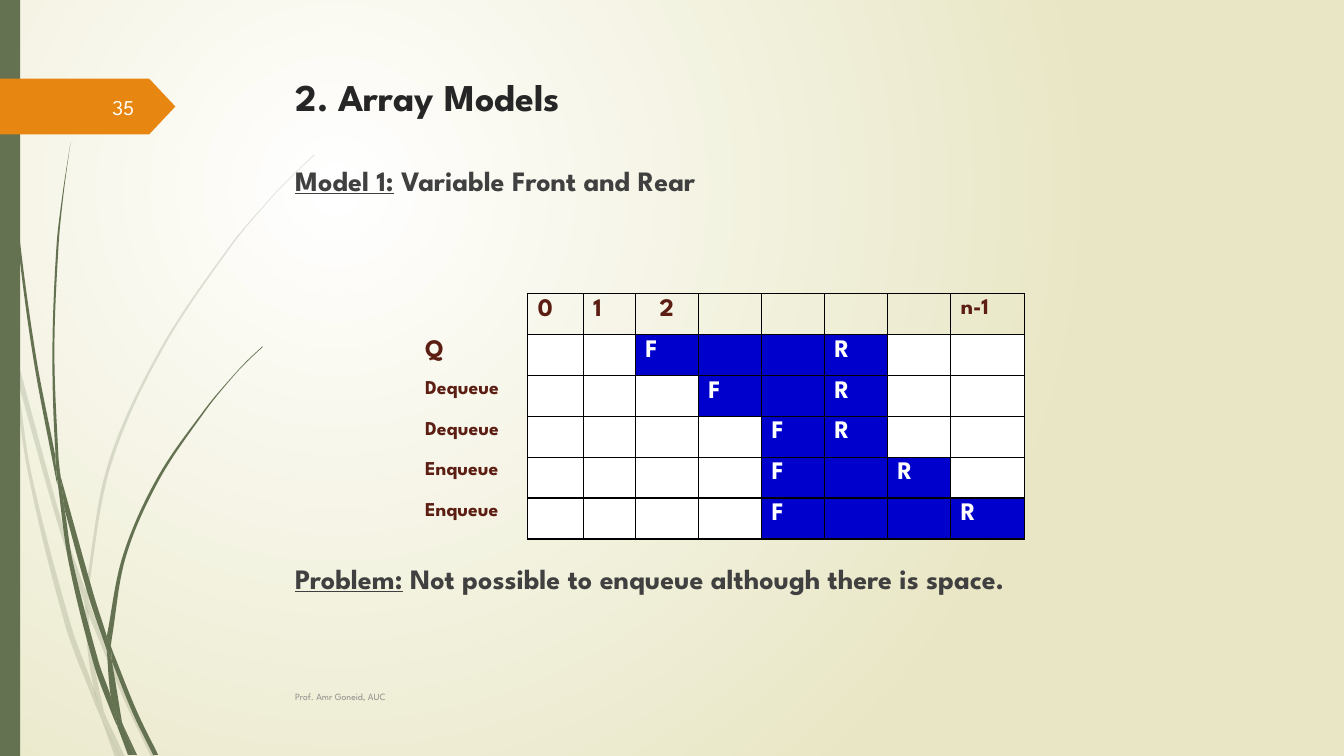
from math import dist

from lxml.etree import SubElement
from pptx import Presentation
from pptx.dml.color import RGBColor
from pptx.enum.shapes import MSO_SHAPE
from pptx.enum.text import MSO_ANCHOR, PP_ALIGN
from pptx.oxml.ns import qn
from pptx.util import Cm, Pt

RECTANGLE, PENTAGON = MSO_SHAPE.RECTANGLE, MSO_SHAPE.PENTAGON
TOP, MIDDLE = MSO_ANCHOR.TOP, MSO_ANCHOR.MIDDLE
LEFT, CENTER, RIGHT = PP_ALIGN.LEFT, PP_ALIGN.CENTER, PP_ALIGN.RIGHT

FONT = "League Spartan"
GREEN, ORANGE, BROWN, BLUE = "647252", "E78712", "5C1E13", "0000CC"
WHITE, BLACK, BODY = "FFFFFF", "000000", "404040"

BLADE_UNIT = Cm(0.0254)
PALE_BLADES = [
    ([(11, 350), (9, 322), (0, 282)], [(0, 299), (10, 344), (11, 350)]),
    ([(85, 586), (62, 520), (14, 345)], [(17, 376), (58, 522), (84, 599)]),
    ([(155, 751), (127, 692), (92, 607), (88, 596)], [(88, 610), (123, 694), (150, 751)]),
    ([(124, 751), (105, 711)], [(105, 711), (119, 751)]),
    ([(101, 714), (99, 707), (93, 683), (70, 619), (31, 469), (17, 376), (11, 350)],
     [(11, 350), (28, 470), (65, 621), (92, 693), (101, 714)]),
    ([(84, 599), (87, 646), (93, 683), (96, 692), (105, 711)],
     [(103, 706), (91, 646), (88, 610), (88, 608), (84, 599)]),
    ([(88, 596), (88, 584), (110, 462), (160, 349), (229, 245), (268, 198), (290, 175),
      (312, 154)],
     [(312, 153), (289, 175), (268, 197), (228, 244), (158, 348), (107, 461), (85, 584),
      (85, 586)]),
    ([(101, 714), (114, 751)], [(119, 751), (101, 714)]),
    ([(88, 610), (88, 596)], [(85, 586), (84, 599)]),
    ([(93, 683), (99, 707), (101, 714), (119, 751)], [(105, 711), (96, 692), (93, 683)]),
]
DARK_BLADES = [
    ([(3, 0), (4, 48), (7, 110), (17, 233), (33, 355), (56, 477), (57, 481)],
     [(55, 457), (55, 453), (36, 355), (19, 232), (8, 109), (5, 48), (4, 0)]),
    ([(106, 633), (106, 631), (93, 590), (60, 472)], [(64, 505), (88, 592), (106, 645)]),
    ([(157, 749), (136, 706), (113, 649), (110, 641)], [(111, 656), (132, 708), (152, 749)]),
    ([(117, 722), (116, 717), (110, 691), (98, 657), (72, 556), (64, 505), (57, 477)],
     [(57, 477), (68, 557), (93, 659), (111, 708), (117, 722)]),
    ([(60, 472), (58, 453), (54, 349), (58, 245), (63, 193), (70, 141)],
     [(70, 141), (62, 193), (56, 245), (52, 349), (55, 449), (60, 472)]),
    ([(136, 749), (122, 719)], [(122, 719), (133, 749)]),
    ([(55, 449), (55, 453), (57, 477), (64, 505)], [(60, 472), (55, 449)]),
    ([(110, 641), (111, 633), (125, 552), (158, 476), (205, 406), (231, 374), (245, 359),
      (261, 344)],
     [(260, 344), (245, 358), (231, 373), (204, 405), (156, 474), (122, 551), (106, 631)]),
    ([(117, 722), (127, 749)], [(131, 749), (117, 722)]),
    ([(106, 645), (110, 691), (116, 706), (122, 719)],
     [(121, 716), (111, 656), (109, 651), (106, 645)]),
    ([(106, 645), (109, 651), (111, 656)], [(110, 641), (106, 631), (106, 633)]),
    ([(133, 749), (122, 719), (116, 706), (110, 691)], [(116, 717), (117, 722), (130, 749)]),
]

INDEX_LABELS = ["0", "1", "2", "", "", "", "", "n-1"]
QUEUE_STATES = [("Q", 2, 5), ("Dequeue", 3, 5), ("Dequeue", 4, 5),
                ("Enqueue", 4, 6), ("Enqueue", 4, 7)]
COLUMN_WIDTHS = [2.84, 1.4, 1.31, 1.59, 1.59, 1.59, 1.59, 1.59, 1.86]
ROW_HEIGHT = 1.03


def color(hex_value):
    return RGBColor.from_string(hex_value)


def paint(shape, hex_value):
    shape.shadow.inherit = False
    shape.fill.solid()
    shape.fill.fore_color.rgb = color(hex_value)
    shape.line.fill.background()


def style_span(span, size, hex_value, bold=False, underline=False):
    font = span.font
    font.name, font.size, font.bold, font.underline = FONT, Pt(size), bold, underline
    font.color.rgb = color(hex_value)


def add_background(page):
    fill = page.background.fill
    fill.gradient()
    for stop, hex_value in zip(fill.gradient_stops, (WHITE, "E8E6C4")):
        stop.color.rgb = color(hex_value)
    gradient = page.element.find(".//" + qn("a:gradFill"))
    gradient.remove(gradient.find(qn("a:lin")))
    circle = SubElement(gradient, qn("a:path"), path="circle")
    SubElement(circle, qn("a:fillToRect"), l="50000", t="50000", r="100000", b="100000")


def control_points(before, start, end, after):
    reach = dist(start, end) / 3
    pull_start = reach / dist(before, end)
    pull_end = reach / dist(start, after)
    return [[s + (e - b) * pull_start for b, s, e in zip(before, start, end)],
            [e - (a - s) * pull_end for s, e, a in zip(start, end, after)]]


def bend_edge(blade, edge, lines):
    padded = [edge[0], *edge, edge[-1]]
    for line, *neighbours in zip(lines, padded, padded[1:], padded[2:], padded[3:]):
        end = line[0]
        line.tag = qn("a:cubicBezTo")
        for x, y in control_points(*neighbours):
            SubElement(line, qn("a:pt"), x=str(round(x - blade.left)),
                       y=str(round(y - blade.top)))
        line.append(end)


def add_blade(page, edges, opacity):
    edges = [[(x * BLADE_UNIT, y * BLADE_UNIT) for x, y in edge] for edge in edges]
    first, second = edges
    builder = page.shapes.build_freeform(*first[0])
    builder.add_line_segments(first[1:] + second, close=True)
    blade = builder.convert_to_shape()
    lines = list(blade.element.iter(qn("a:lnTo")))
    bend_edge(blade, first, lines[:len(first) - 1])
    bend_edge(blade, second, lines[len(first):])
    paint(blade, GREEN)
    if opacity < 100:
        tint = blade.element.spPr.find(qn("a:solidFill"))[0]
        SubElement(tint, qn("a:alpha"), val=str(opacity * 1000))


def add_block(page, kind, left, top, width, height, hex_value):
    block = page.shapes.add_shape(kind, Cm(left), Cm(top), Cm(width), Cm(height))
    paint(block, hex_value)
    return block


def add_text(page, text, left, top, width, height, size, hex_value,
             bold=False, anchor=TOP, align=LEFT, lead=""):
    box = page.shapes.add_textbox(Cm(left), Cm(top), Cm(width), Cm(height))
    frame = box.text_frame
    frame.word_wrap = True
    frame.vertical_anchor = anchor
    para = frame.paragraphs[0]
    para.alignment = align
    for part in filter(None, (lead, text)):
        span = para.add_run()
        span.text = part
        style_span(span, size, hex_value, bold, underline=part == lead)


def set_borders(cell, visible_sides):
    properties = cell._tc.get_or_add_tcPr()
    for side in "LRTB":
        line = SubElement(properties, qn("a:ln" + side), w=str(Pt(1)))
        if side in visible_sides:
            fill = SubElement(line, qn("a:solidFill"))
            SubElement(fill, qn("a:srgbClr"), val=BLACK)
        else:
            SubElement(line, qn("a:noFill"))


def set_cell(cell, text="", size=18, hex_value=BROWN, fill=None, sides="LRTB", align=LEFT):
    set_borders(cell, sides)
    if fill:
        cell.fill.solid()
        cell.fill.fore_color.rgb = color(fill)
    else:
        cell.fill.background()
    para = cell.text_frame.paragraphs[0]
    para.text = text
    para.alignment = align
    for span in para.runs:
        style_span(span, size, hex_value, bold=True)


def add_queue_table(page):
    rows, columns = len(QUEUE_STATES) + 1, len(COLUMN_WIDTHS)
    frame = page.shapes.add_table(rows, columns, Cm(10.46), Cm(7.4),
                                  Cm(sum(COLUMN_WIDTHS)), Cm(ROW_HEIGHT * rows))
    table = frame.table
    table.first_row = table.horz_banding = False
    for column, width in zip(table.columns, COLUMN_WIDTHS):
        column.width = Cm(width)

    set_cell(table.cell(0, 0), sides="R")
    for slot, label in enumerate(INDEX_LABELS):
        set_cell(table.cell(0, slot + 1), label, size=16 if label == "n-1" else 18,
                 align=CENTER if label == "2" else LEFT)
    for row, (label, front, rear) in enumerate(QUEUE_STATES, 1):
        set_cell(table.cell(row, 0), label, size=18 if label == "Q" else 14, sides="R")
        marks = {front: "F", rear: "R"}
        for slot in range(len(INDEX_LABELS)):
            set_cell(table.cell(row, slot + 1), marks.get(slot, ""), hex_value=WHITE,
                     fill=BLUE if front <= slot <= rear else WHITE)


def main():
    deck = Presentation()
    deck.slide_width, deck.slide_height = Cm(33.87), Cm(19.05)
    page = deck.slides.add_slide(deck.slide_layouts[6])
    add_background(page)
    for blades, opacity in ((PALE_BLADES, 20), (DARK_BLADES, 100)):
        for edges in blades:
            add_blade(page, edges, opacity)
    add_block(page, RECTANGLE, 0, 0, 0.51, 19.05, GREEN)
    marker = add_block(page, PENTAGON, 0, 1.98, 4.42, 1.41, ORANGE)
    marker.adjustments[0] = 0.47

    add_text(page, "2. Array Models", 7.2, 1.73, 24.77, 3.56, 27, "262626", bold=True)
    for lead, text, top in (
            ("Model 1:", " Variable Front and Rear", 3.99),
            ("Problem:", " Not possible to enqueue although there is space.", 14.02)):
        add_text(page, text, 7.19, top, 24.77, 1.2, 20, BODY, bold=True, lead=lead)
    add_text(page, "Prof. Amr Goneid, AUC", 7.19, 17.04, 21.16, 1.02, 6.8, "8C8C8C",
             anchor=MIDDLE)
    add_text(page, "35", 1.47, 2.18, 2.16, 1.02, 15, "FEFFFF", anchor=MIDDLE, align=RIGHT)
    add_queue_table(page)
    deck.save("out.pptx")


if __name__ == "__main__":
    main()
